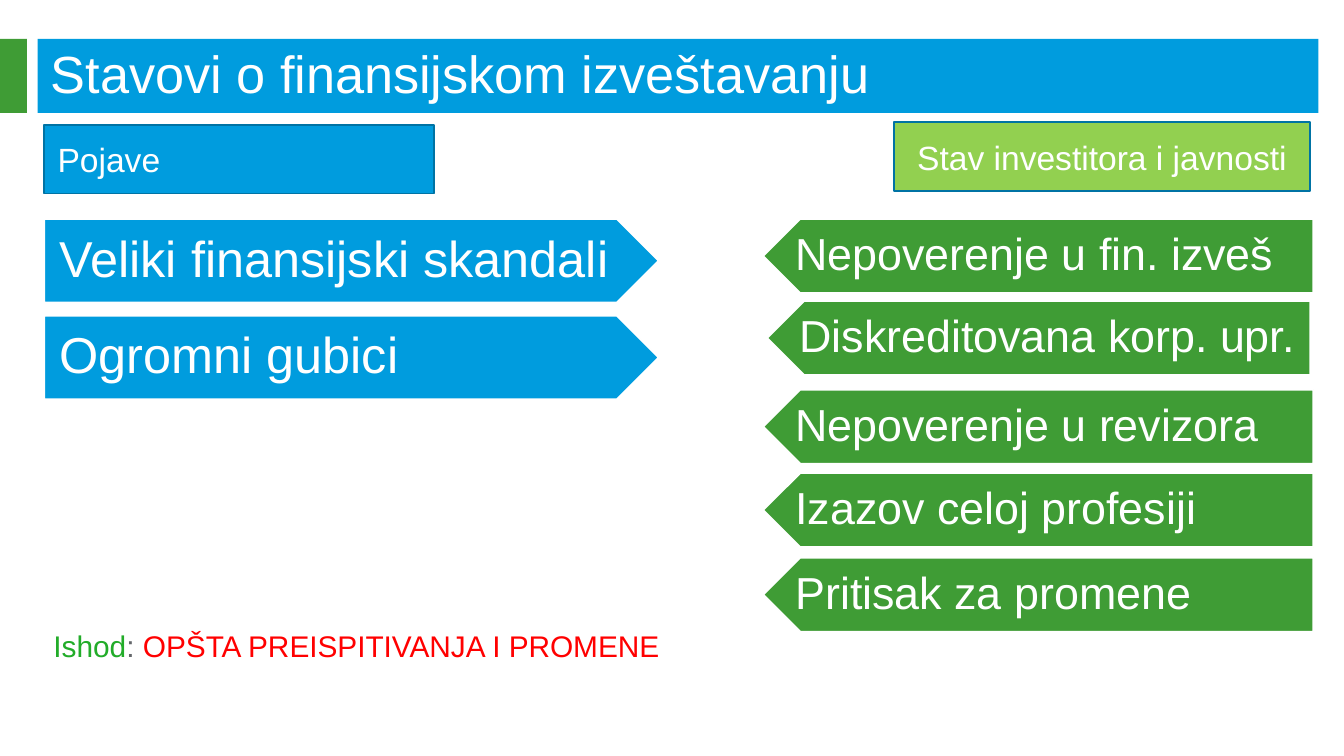
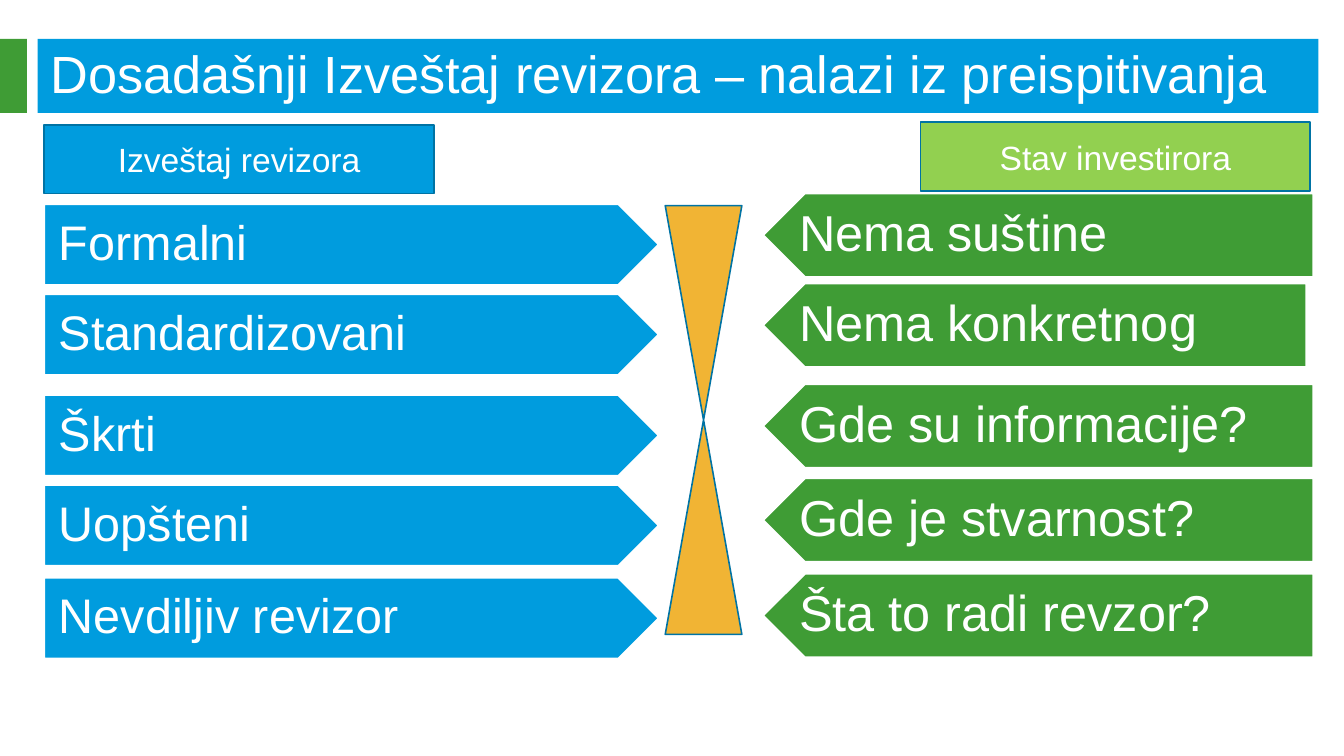
from dataclasses import dataclass

from pptx import Presentation
from pptx.dml.color import RGBColor
from pptx.enum.shapes import MSO_SHAPE as Preset
from pptx.enum.text import MSO_ANCHOR as Anchor, PP_ALIGN as Align
from pptx.shapes.autoshape import Shape
from pptx.shapes.shapetree import _BaseGroupShapes as ShapeTree
from pptx.slide import Slide
from pptx.text.text import TextFrame
from pptx.util import Inches, Length, Pt

SLIDE_WIDTH = Inches(10)
SLIDE_HEIGHT = Inches(5.625)
CELL = SLIDE_WIDTH / 100  # square grid cell; all positions are counted in cells

WHITE = RGBColor(0xFF, 0xFF, 0xFF)
BLUE = RGBColor(0x00, 0x9C, 0xDE)
DARK_BLUE = RGBColor(0x00, 0x73, 0xA4)
GREEN = RGBColor(0x3F, 0x9C, 0x35)
LIGHT_GREEN = RGBColor(0x92, 0xD0, 0x50)
OUTCOME_GREEN = RGBColor(0x22, 0xAC, 0x29)
AMBER = RGBColor(0xF1, 0xB4, 0x34)
GRAY = RGBColor(0x63, 0x66, 0x6A)
RED = RGBColor(0xFF, 0x00, 0x00)

FONT = "Arial"
LINE_WIDTH = Pt(0.85)
BAND_TOP, BAND_HEIGHT = 2.9, 5.5
HEADER_HEIGHT = 5.1


@dataclass(frozen=True)
class Box:
    left: float
    top: float
    width: float
    height: float

    def lengths(self) -> tuple[Length, ...]:
        cells = (self.left, self.top, self.width, self.height)
        return tuple(Length(round(count * CELL)) for count in cells)


@dataclass(frozen=True)
class Header:
    text: str
    box: Box
    fill: RGBColor
    align: Align = Align.CENTER


@dataclass(frozen=True)
class Arrow:
    text: str
    top: float
    left_inset: float = 0
    right_inset: float = 0


@dataclass(frozen=True)
class ArrowColumn:
    left: float
    width: float
    height: float
    size: float
    fill: RGBColor
    arrows: tuple[Arrow, ...]
    points_left: bool = False


def blue_column(height: float, size: float, *arrows: Arrow) -> ArrowColumn:
    return ArrowColumn(3.3, 45.7, height, size, BLUE, arrows)


def green_column(height: float, size: float, *arrows: Arrow) -> ArrowColumn:
    return ArrowColumn(56.8, 40.9, height, size, GREEN, arrows, points_left=True)


def add_preset(shapes: ShapeTree, preset: Preset, box: Box, fill: RGBColor,
               line: RGBColor | None = None) -> Shape:
    shape = shapes.add_shape(preset, *box.lengths())
    shape.shadow.inherit = False
    shape.fill.solid()
    shape.fill.fore_color.rgb = fill
    if line is None:
        shape.line.fill.background()
    else:
        shape.line.color.rgb = line
        shape.line.width = LINE_WIDTH
    return shape


def write(frame: TextFrame, size: float, *runs: tuple[str, RGBColor],
          align: Align = Align.LEFT, anchor: Anchor = Anchor.MIDDLE) -> None:
    frame.word_wrap = True
    frame.vertical_anchor = anchor
    paragraph = frame.paragraphs[0]
    paragraph.alignment = align
    for text, color in runs:
        run = paragraph.add_run()
        run.text = text
        run.font.name = FONT
        run.font.size = Pt(size)
        run.font.color.rgb = color


def add_title(slide: Slide, title: str) -> None:
    """Draw the blue title band, its green tab and the title itself."""
    add_preset(slide.shapes, Preset.RECTANGLE, Box(2.8, BAND_TOP, 95.3, BAND_HEIGHT), BLUE)
    add_preset(slide.shapes, Preset.RECTANGLE, Box(0, BAND_TOP, 2, BAND_HEIGHT), GREEN)
    text_box = slide.shapes.add_textbox(*Box(2.8, 3.9, 94.5, 3).lengths())
    write(text_box.text_frame, 28, (title, WHITE))


def add_header(slide: Slide, header: Header) -> None:
    shape = add_preset(slide.shapes, Preset.RECTANGLE, header.box, header.fill, DARK_BLUE)
    write(shape.text_frame, 18, (header.text, WHITE), align=header.align)


def add_arrow_column(slide: Slide, column: ArrowColumn) -> None:
    """Group the arrows; each label stops halfway into its arrow's tip."""
    group = slide.shapes.add_group_shape()
    half_tip = column.height / 4
    margin = Pt(column.size * 0.3)
    for arrow in column.arrows:
        left = column.left + arrow.left_inset
        width = column.width - arrow.left_inset - arrow.right_inset
        shape = add_preset(group.shapes, Preset.PENTAGON,
                           Box(left, arrow.top, width, column.height), column.fill, WHITE)
        if column.points_left:
            shape.element.spPr.get_or_add_xfrm().set("flipH", "1")
            left += half_tip
        label = group.shapes.add_textbox(
            *Box(left, arrow.top, width - half_tip, column.height).lengths())
        frame = label.text_frame
        frame.margin_left = frame.margin_right = margin
        frame.margin_top = frame.margin_bottom = margin
        write(frame, column.size, (arrow.text, WHITE))
        frame.paragraphs[0].line_spacing = 0.9


def add_comparison(presentation: Presentation, title: str, columns: tuple[ArrowColumn, ...],
                   headers: tuple[Header, ...]) -> Slide:
    slide = presentation.slides.add_slide(presentation.slide_layouts[6])
    add_title(slide, title)
    for column in columns:
        add_arrow_column(slide, column)
    for header in headers:
        add_header(slide, header)
    return slide


def add_attitudes(presentation: Presentation) -> None:
    slide = add_comparison(
        presentation,
        "Stavovi o finansijskom izveštavanju",
        (
            blue_column(
                6.2, 27,
                Arrow("Veliki finansijski skandali", 16.3),
                Arrow("Ogromni gubici", 23.5),
            ),
            green_column(
                5.5, 24,
                Arrow("Nepoverenje u fin. izveš", 16.3),
                Arrow("Diskreditovana korp. upr.", 22.4, left_inset=0.3, right_inset=0.2),
                Arrow("Nepoverenje u revizora", 29),
                Arrow("Izazov celoj profesiji", 35.2),
                Arrow("Pritisak za promene", 41.5),
            ),
        ),
        (
            Header("Pojave", Box(3.3, 9.3, 29, HEADER_HEIGHT), BLUE, Align.LEFT),
            Header("Stav investitora i javnosti", Box(66.5, 9.1, 31, HEADER_HEIGHT), LIGHT_GREEN),
        ),
    )
    outcome = slide.shapes.add_textbox(*Box(3, 46.2, 94.6, 4.7).lengths())
    write(outcome.text_frame, 16, ("Ishod", OUTCOME_GREEN), (": ", GRAY),
          ("OPŠTA PREISPITIVANJA I PROMENE", RED), anchor=Anchor.TOP)


def add_findings(presentation: Presentation) -> None:
    slide = add_comparison(
        presentation,
        "Dosadašnji Izveštaj revizora – nalazi iz preispitivanja",
        (
            blue_column(
                6, 26,
                Arrow("Formalni", 15.2),
                Arrow("Standardizovani", 21.9),
                Arrow("Škrti", 29.4),
                Arrow("Uopšteni", 36.1),
                Arrow("Nevdiljiv revizor", 43),
            ),
            green_column(
                6.2, 27,
                Arrow("Nema suštine", 14.4),
                Arrow("Nema konkretnog", 21.1, right_inset=0.5),
                Arrow("Gde su informacije?", 28.6),
                Arrow("Gde je stvarnost?", 35.6),
                Arrow("Šta to radi revzor?", 42.7),
            ),
        ),
        (
            Header("Izveštaj revizora", Box(3.3, 9.3, 29, HEADER_HEIGHT), BLUE),
            Header("Stav investirora", Box(68.5, 9.1, 29, HEADER_HEIGHT), LIGHT_GREEN),
        ),
    )
    add_preset(slide.shapes, Preset.FLOWCHART_COLLATE, Box(49.5, 15.3, 5.7, 31.9),
               AMBER, DARK_BLUE)


def main() -> None:
    presentation = Presentation()
    presentation.slide_width = SLIDE_WIDTH
    presentation.slide_height = SLIDE_HEIGHT
    add_attitudes(presentation)
    add_findings(presentation)
    presentation.save("out.pptx")


if __name__ == "__main__":
    main()
